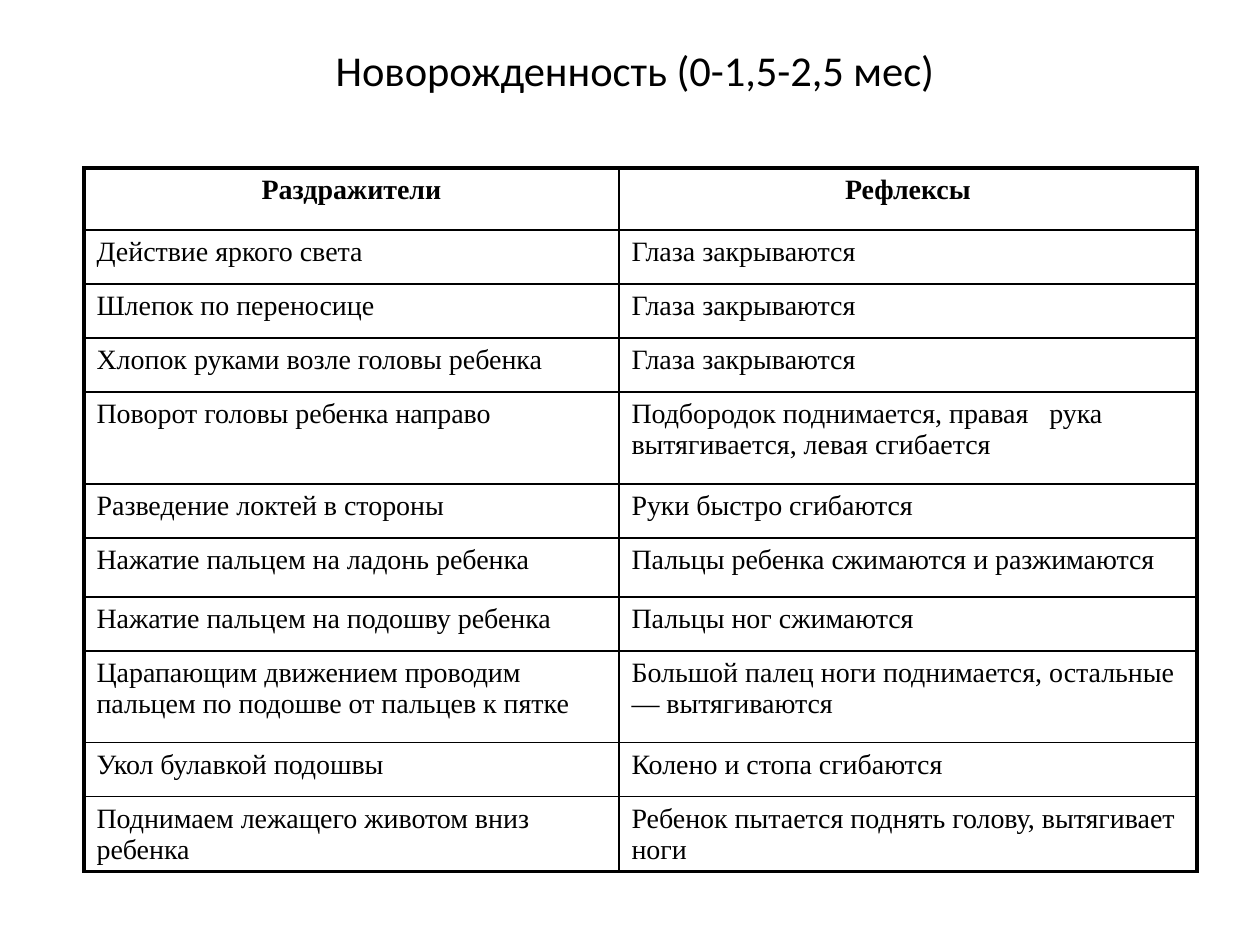
from lxml import etree
from pptx import Presentation
from pptx.dml.color import RGBColor
from pptx.enum.text import MSO_ANCHOR, PP_ALIGN
from pptx.oxml.ns import qn
from pptx.util import Pt

TOP = MSO_ANCHOR.TOP
LEFT, CENTER = PP_ALIGN.LEFT, PP_ALIGN.CENTER
EMU_PER_PX = 914400 / 126
BLACK = "000000"
OUTER, INNER = 2.25, 1

TITLE = "Новорожденность (0-1,5-2,5 мес)"
COLUMN_WIDTHS = (535, 578)
# Row height, stimulus, reflex
ROWS = (
    (62, "Раздражители", "Рефлексы"),
    (54, "Действие яркого света", "Глаза закрываются"),
    (54, "Шлепок по переносице", "Глаза закрываются"),
    (54, "Хлопок руками возле головы ребенка", "Глаза закрываются"),
    (92, "Поворот головы ребенка направо",
     "Подбородок поднимается, правая   рука вытягивается, левая сгибается"),
    (54, "Разведение локтей в стороны", "Руки быстро сгибаются"),
    (59, "Нажатие пальцем на ладонь ребенка",
     "Пальцы ребенка сжимаются и разжимаются"),
    (54, "Нажатие пальцем на подошву ребенка", "Пальцы ног сжимаются"),
    (92, "Царапающим движением проводим пальцем по подошве от пальцев к пятке",
     "Большой палец ноги поднимается, остальные — вытягиваются"),
    (54, "Укол булавкой подошвы", "Колено и стопа сгибаются"),
    (75, "Поднимаем лежащего животом вниз ребенка",
     "Ребенок пытается поднять голову, вытягивает ноги"),
)


def px(length):
    return round(length * EMU_PER_PX)


def color(hex_code):
    return RGBColor.from_string(hex_code)


def write_text(frame, text, *, font, size, bold=False, align=LEFT, hex_code=BLACK):
    frame.word_wrap = True
    para = frame.paragraphs[0]
    para.alignment = align
    span = para.add_run()
    span.text = text
    span.font.name = font
    span.font.size = Pt(size)
    span.font.bold = bold
    span.font.color.rgb = color(hex_code)


def set_borders(cell, **widths):
    """Draw cell borders; widths in points are keyed by L, R, T and B, in that order."""
    properties = cell._tc.get_or_add_tcPr()
    for side, width in widths.items():
        line = etree.SubElement(properties, qn(f"a:ln{side}"), w=str(Pt(width)))
        fill = etree.SubElement(line, qn("a:solidFill"))
        etree.SubElement(fill, qn("a:srgbClr"), val=BLACK)


def add_title(page):
    title = page.shapes.title
    title.left, title.top, title.width, title.height = map(px, (73, 38, 1124, 110))
    title.text_frame.vertical_anchor = TOP
    write_text(title.text_frame, TITLE, font="Calibri", size=24.3, align=CENTER)


def add_reflex_table(page):
    width, height = sum(COLUMN_WIDTHS), sum(row[0] for row in ROWS)
    table = page.shapes.add_table(
        len(ROWS), len(COLUMN_WIDTHS), px(84), px(168), px(width), px(height)
    ).table
    table.first_row = table.horz_banding = False
    for column, column_width in zip(table.columns, COLUMN_WIDTHS):
        column.width = px(column_width)

    last_row, last_column = len(ROWS) - 1, len(COLUMN_WIDTHS) - 1
    for r, (row_height, *texts) in enumerate(ROWS):
        table.rows[r].height = px(row_height)
        header = r == 0
        for c, text in enumerate(texts):
            cell = table.cell(r, c)
            write_text(cell.text_frame, text, font="Times New Roman", size=16,
                       bold=header, align=CENTER if header else LEFT)
            set_borders(
                cell,
                L=OUTER if c == 0 else INNER,
                R=OUTER if c == last_column else INNER,
                T=OUTER if header else INNER,
                B=OUTER if r == last_row else INNER,
            )
            cell.fill.background()


def main():
    deck = Presentation()
    deck.slide_width, deck.slide_height = px(1260), px(945)
    page = deck.slides.add_slide(deck.slide_layouts.get_by_name("Title Only"))
    add_title(page)
    add_reflex_table(page)
    deck.save("out.pptx")


if __name__ == "__main__":
    main()
